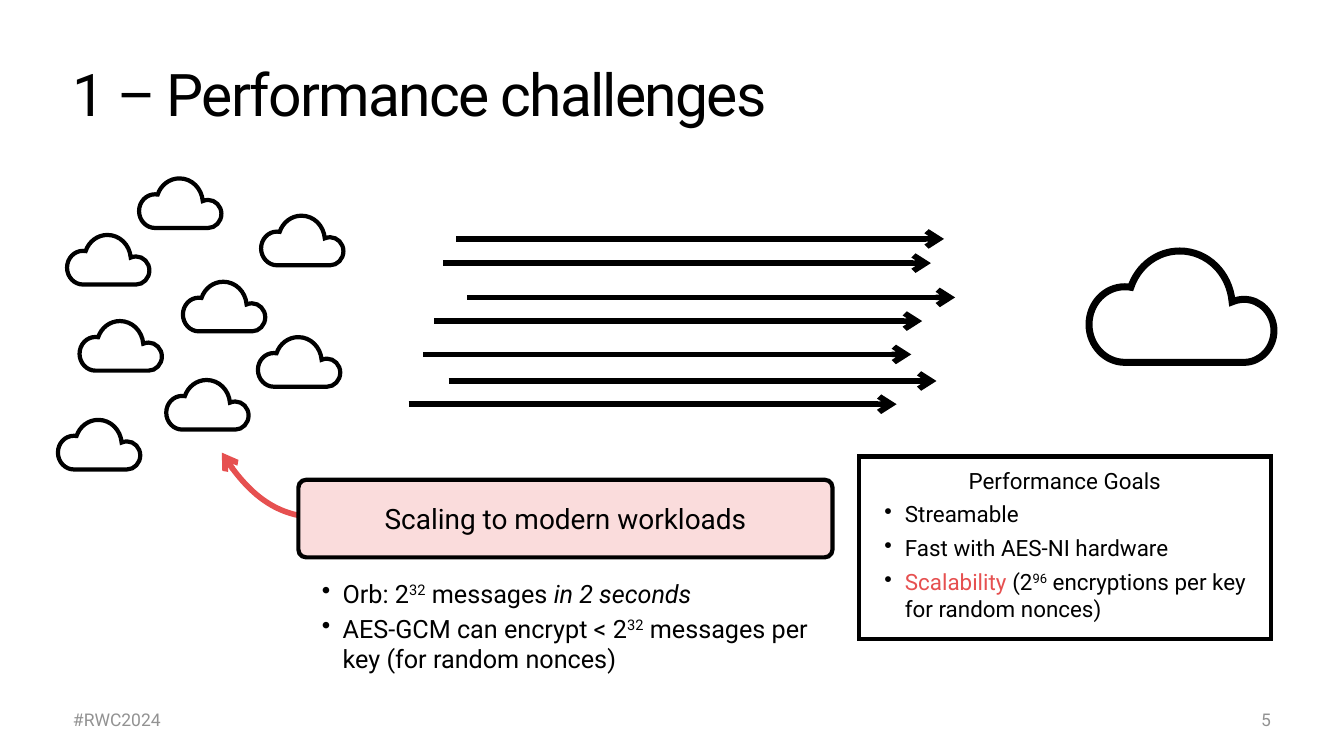
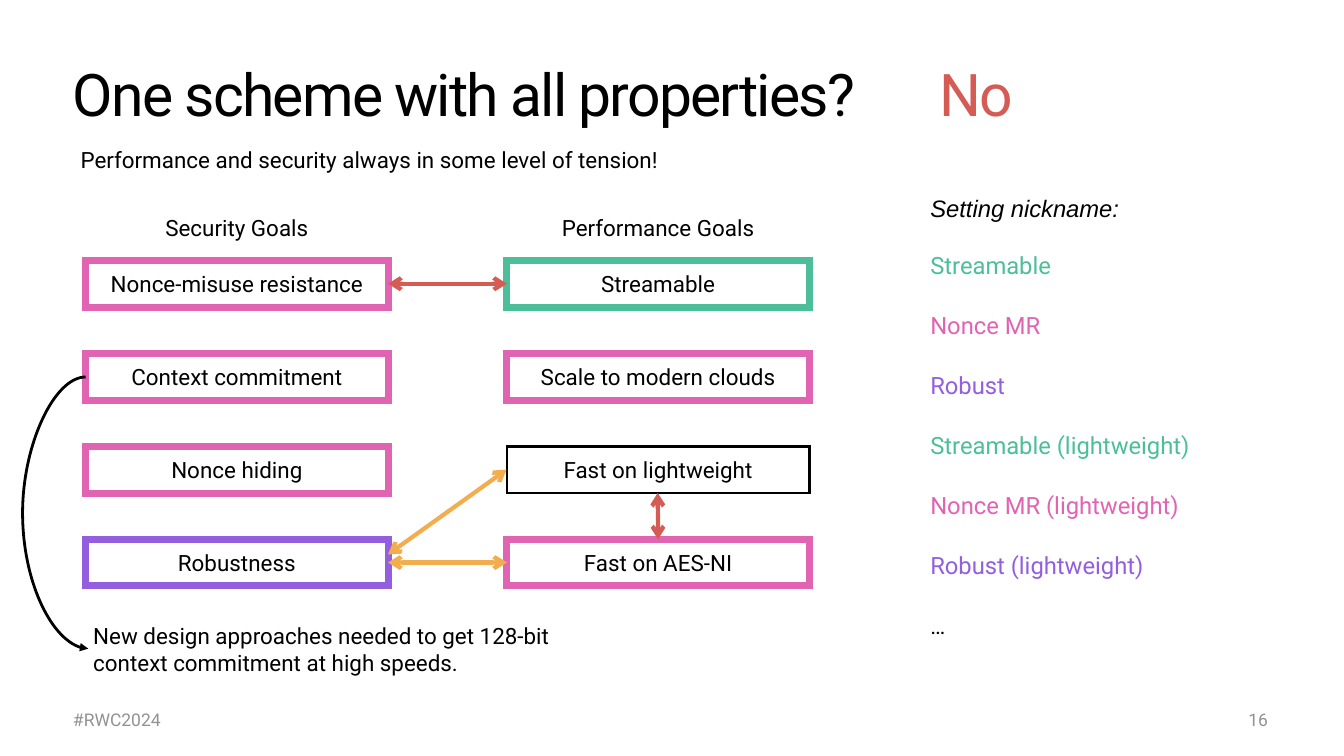
"""Build two slides on performance challenges and competing scheme properties."""
from dataclasses import dataclass
from typing import NamedTuple

from lxml.etree import SubElement
from pptx import Presentation
from pptx.dml.color import RGBColor
from pptx.enum.shapes import MSO_CONNECTOR as Connector, MSO_SHAPE as Preset
from pptx.enum.text import MSO_ANCHOR as Anchor, MSO_AUTO_SIZE as AutoSize, PP_ALIGN as Align
from pptx.oxml.ns import qn
from pptx.util import Cm, Pt

COLORS = {
    "black": "000000", "white": "FFFFFF", "gray": "929292",
    "coral": "E65050", "blush": "FADCDC", "red": "D55B55",
    "pink": "E064B2", "purple": "935FDE", "green": "4CBF99", "orange": "F2AE4E",
}
FONT = "Roboto"
CLOUD_WIDTH = 3.67
CLOUD_START = (1.8, 0)
CLOUD_CURVES = [
    [(1.35, 0), (0.97, 0.3), (0.83, 0.72)],
    [(0.79, 0.71), (0.75, 0.71), (0.71, 0.71)],
    [(0.32, 0.71), (0, 1.04), (0, 1.46)],
    [(0, 1.87), (0.32, 2.21), (0.71, 2.21)],
    [(1.5, 2.21), (2.29, 2.21), (3.08, 2.21)],
    [(3.4, 2.21), (3.67, 1.93), (3.67, 1.58)],
    [(3.67, 1.24), (3.4, 0.96), (3.08, 0.96)],
    [(2.99, 0.96), (2.91, 0.98), (2.84, 1.01)],
    [(2.79, 0.44), (2.35, 0), (1.8, 0)],
]


class Box(NamedTuple):
    left: float
    top: float
    width: float
    height: float


class Point(NamedTuple):
    x: float
    y: float


@dataclass
class Run:
    text: str
    color: str | None = None
    italic: bool = False
    raised: bool = False


@dataclass
class Line:
    runs: list[Run]
    bullet: bool = False
    align: Align | None = None
    before: float = 0
    after: float = 0
    spacing: float | None = None


@dataclass
class Goal:
    text: str
    color: str
    weight: float = 10


@dataclass
class Nickname:
    text: str
    color: str
    width: float
    size: float = 34


@dataclass
class Tension:
    start: Point
    end: Point
    color: str


def rgb(name: str) -> RGBColor:
    """Return the named colour."""
    return RGBColor.from_string(COLORS[name])


def style_line(shape, color: str, weight: float, head: str = "", tail: str = "") -> None:
    """Set the outline, its sharp corners and its arrowheads."""
    shape.line.color.rgb = rgb(color)
    shape.line.width = Pt(weight)
    outline = shape._element.spPr.find(qn("a:ln"))
    SubElement(outline, qn("a:miter"), lim="400000")
    for tag, kind in (("a:headEnd", head), ("a:tailEnd", tail)):
        if kind:
            SubElement(outline, qn(tag), type=kind)


def write_text(shape, content: str | list[Line], *, size: float, color: str = "black",
               font: str = FONT, align: Align = Align.LEFT, anchor: Anchor = Anchor.MIDDLE,
               inset: tuple[float, float] = (0.15, 0.15), wrap: bool = True,
               grow: bool = False, italic: bool = False, tracking: float = 0,
               spacing: float | None = None, before: float = 0) -> None:
    """Fill a shape with formatted text."""
    frame = shape.text_frame
    frame.word_wrap = wrap
    frame.auto_size = AutoSize.SHAPE_TO_FIT_TEXT if grow else AutoSize.NONE
    frame.vertical_anchor = anchor
    frame.margin_left = frame.margin_right = Cm(inset[0])
    frame.margin_top = frame.margin_bottom = Cm(inset[1])
    if isinstance(content, str):
        content = [Line([Run(content, italic=italic)], before=before, spacing=spacing)]
    for index, line in enumerate(content):
        paragraph = frame.add_paragraph() if index else frame.paragraphs[0]
        paragraph.alignment = line.align or align
        paragraph.space_before, paragraph.space_after = Pt(line.before), Pt(line.after)
        if line.spacing:
            paragraph.line_spacing = line.spacing
        if line.bullet:
            properties = paragraph._p.get_or_add_pPr()
            properties.set("marL", str(Cm(2.08)))
            properties.set("indent", str(Cm(-1.04)))
            bullet_color = SubElement(properties, qn("a:buClr"))
            SubElement(bullet_color, qn("a:srgbClr"), val=COLORS["black"])
            SubElement(properties, qn("a:buChar"), char="•")
        for piece in line.runs:
            run = paragraph.add_run()
            run.text = piece.text
            run.font.name, run.font.size = font, Pt(size)
            run.font.italic = piece.italic
            run.font.color.rgb = rgb(piece.color or color)
            if piece.raised:
                run._r.get_or_add_rPr().set("baseline", "32000")
            if tracking:
                run._r.get_or_add_rPr().set("spc", str(round(tracking * 100)))


def add_text(slide, box: Box, content: str | list[Line], **text_format) -> None:
    """Add a text box."""
    write_text(slide.shapes.add_textbox(*map(Cm, box)), content, **text_format)


def add_panel(slide, box: Box, content: str | list[Line], *, fill: str = "white",
              outline: str = "", weight: float = 6, preset: Preset = Preset.RECTANGLE,
              **text_format):
    """Add a filled shape with text."""
    shape = slide.shapes.add_shape(preset, *map(Cm, box))
    shape.shadow.inherit = False
    shape.fill.solid()
    shape.fill.fore_color.rgb = rgb(fill)
    if outline:
        style_line(shape, outline, weight)
    else:
        shape.line.fill.background()
    write_text(shape, content, **text_format)
    return shape


def add_link(slide, start: Point, end: Point, color: str, weight: float, *,
             head: str = "", tail: str = "", kind: Connector = Connector.STRAIGHT):
    """Add a connector with arrowheads."""
    connector = slide.shapes.add_connector(kind, *map(Cm, (*start, *end)))
    style_line(connector, color, weight, head, tail)
    SubElement(connector._element.spPr, qn("a:effectLst"))
    return connector


def add_outline(slide, start: Point, curves: list[list[Point]], closed: bool):
    """Add a freeform made of cubic curves."""
    builder = slide.shapes.build_freeform(Cm(start.x), Cm(start.y))
    builder.add_line_segments([(Cm(end.x), Cm(end.y)) for *_, end in curves], close=closed)
    shape = builder.convert_to_shape()
    shape.shadow.inherit = False
    segments = list(shape._element.spPr.iter(qn("a:lnTo")))
    for segment, curve in zip(segments, curves):
        segment.tag = qn("a:cubicBezTo")
        for corner in list(segment):
            segment.remove(corner)
        for point in curve:
            SubElement(segment, qn("a:pt"), x=str(Cm(point.x) - shape.left),
                       y=str(Cm(point.y) - shape.top))
    return shape


def add_cloud(slide, corner: Point, width: float, weight: float) -> None:
    """Add an outlined cloud."""
    scale = width / CLOUD_WIDTH

    def place(x: float, y: float) -> Point:
        """Move a cloud point onto the slide."""
        return Point(corner.x + x * scale, corner.y + y * scale)

    curves = [[place(*point) for point in curve] for curve in CLOUD_CURVES]
    cloud = add_outline(slide, place(*CLOUD_START), curves, closed=True)
    cloud.fill.solid()
    cloud.fill.fore_color.rgb = rgb("white")
    style_line(cloud, "black", weight)


def add_heading(slide, left: float, width: float, text: str, color: str = "black") -> None:
    """Add large text on the title line."""
    add_text(slide, Box(left, 2.26, width, 4.32), text, size=84, color=color,
             anchor=Anchor.BOTTOM, tracking=-2.5, spacing=0.8)


def start_slide(presentation, title: str, number: int, number_left: float):
    """Add a slide with title and footer."""
    slide = presentation.slides.add_slide(presentation.slide_layouts[6])
    add_text(slide, Box(3.53, 35.28, 25.4, 1.94), "#RWC2024", size=25, color="gray")
    add_heading(slide, 3.53, 60.68, title)
    add_text(slide, Box(number_left, 35.51, 25.4, 1.47), str(number), size=25, color="gray",
             align=Align.RIGHT, grow=True)
    return slide


def build_challenges(presentation) -> None:
    """Build the performance challenges slide."""
    slide = start_slide(presentation, "1 – Performance challenges", 5, 38.81)
    add_cloud(slide, Point(54.89, 12.65), 9.32, 10)
    for corner in [(8.38, 19.15), (4.01, 16.18), (3.38, 11.84), (9.22, 14.2),
                   (13.16, 10.87), (13, 16.99), (7.01, 8.99), (2.92, 21.16)]:
        add_cloud(slide, Point(*corner), 4.15, 6)
    for x, y in [(22.99, 12.04), (22.33, 13.26), (23.55, 14.99), (21.89, 16.18),
                 (21.34, 17.86), (22.61, 19.2), (20.6, 20.37)]:
        add_link(slide, Point(x, y), Point(x + 24.59, y), "black", 8, tail="arrow")

    bend = [Point(14.63, 26.31), Point(12.65, 25.25), Point(11.18, 22.81)]
    pointer = add_outline(slide, Point(17.07, 26.04), [bend], closed=False)
    pointer.fill.background()
    style_line(pointer, "coral", 8, tail="arrow")
    banner = add_panel(slide, Box(15.04, 24.18, 26.92, 3.91), "Scaling to modern workloads",
                       fill="blush", outline="black", preset=Preset.ROUNDED_RECTANGLE,
                       size=40, align=Align.CENTER)
    banner.adjustments[0] = 0.1

    workloads = [
        Line([Run("Orb: 2"), Run("32", raised=True), Run(" messages "),
              Run("in 2 seconds", italic=True)], bullet=True, after=6, spacing=1.5),
        Line([Run("AES-GCM can encrypt < 2"), Run("32", raised=True),
              Run(" messages per key (for random nonces)")], bullet=True, after=6),
    ]
    add_text(slide, Box(15.04, 28.24, 26.92, 5.89), workloads, size=36,
             anchor=Anchor.TOP, grow=True)
    bullets = [
        [Run("Streamable")],
        [Run("Fast with AES-NI hardware")],
        [Run("Scalability", color="coral"), Run(" (2"), Run("96", raised=True),
         Run(" encryptions per key for random nonces)")],
    ]
    goals = [Line([Run("Performance Goals")], align=Align.CENTER)]
    goals += [Line(runs, bullet=True, before=10) for runs in bullets]
    add_panel(slide, Box(43.28, 23.01, 20.78, 9.19), goals, outline="black", size=32,
              anchor=Anchor.TOP, inset=(0.25, 0.51))


def build_properties(presentation) -> None:
    """Build the competing properties slide."""
    slide = start_slide(presentation, "One scheme with all properties?", 16, 38.66)
    add_heading(slide, 47.19, 18.08, "No", "red")
    add_text(slide, Box(3.91, 7.16, 30.81, 1.75),
             "Performance and security always in some level of tension!",
             size=32, wrap=False, grow=True, before=8)

    columns = {
        "Security Goals": [Goal("Nonce-misuse resistance", "pink"),
                           Goal("Context commitment", "pink"),
                           Goal("Nonce hiding", "pink"), Goal("Robustness", "purple")],
        "Performance Goals": [Goal("Streamable", "green"),
                              Goal("Scale to modern clouds", "pink"),
                              Goal("Fast on lightweight", "black", 4),
                              Goal("Fast on AES-NI", "pink")],
    }
    for left, (header, goals) in zip((4.32, 25.55), columns.items()):
        add_panel(slide, Box(left, 10.29, 15.24, 2.36), header, size=32, align=Align.CENTER)
        for row, goal in enumerate(goals):
            add_panel(slide, Box(left, 13.13 + row * 4.68, 15.24, 2.36), goal.text,
                      outline=goal.color, weight=goal.weight, size=32, align=Align.CENTER)

    for tension in [Tension(Point(25.55, 14.3), Point(19.56, 14.3), "red"),
                    Tension(Point(25.55, 28.35), Point(19.56, 28.35), "orange"),
                    Tension(Point(33.15, 24.84), Point(33.17, 27.18), "red"),
                    Tension(Point(25.53, 23.67), Point(19.56, 27.94), "orange")]:
        add_link(slide, tension.start, tension.end, tension.color, 6, head="arrow", tail="arrow")

    add_text(slide, Box(46.74, 9.6, 10.67, 1.73), "Setting nickname:", size=34, font="Arial",
             italic=True, wrap=False, grow=True, before=8)
    nicknames = [
        Nickname("Streamable", "green", 6.93), Nickname("Nonce MR", "pink", 6.22),
        Nickname("Robust", "purple", 4.37), Nickname("Streamable (lightweight)", "green", 14.6),
        Nickname("Nonce MR (lightweight)", "pink", 13.89),
        Nickname("Robust (lightweight)", "purple", 12.04), Nickname("…", "black", 1.24, 32),
    ]
    for row, name in enumerate(nicknames):
        add_text(slide, Box(46.74, 12.47 + row * 3.03, name.width, 1.73), name.text,
                 size=name.size, color=name.color, wrap=False, grow=True, before=8)

    add_text(slide, Box(4.45, 31.17, 25.3, 3.05),
             "New design approaches needed to get 128-bit context commitment at high speeds.",
             size=32, inset=(0.25, 0.15), grow=True, before=8)
    loop = add_link(slide, Point(4.45, 32.69), Point(4.32, 19), "black", 4,
                    head="triangle", kind=Connector.CURVE)
    bend = round((4.45 - 1.14) / (4.45 - 4.32) * 100000)
    guides = loop._element.spPr.find(qn("a:prstGeom")).get_or_add_avLst()
    SubElement(guides, qn("a:gd"), name="adj1", fmla=f"val {bend}")


def main() -> None:
    """Build and save the presentation."""
    presentation = Presentation()
    presentation.slide_width, presentation.slide_height = Cm(67.74), Cm(38.1)
    build_challenges(presentation)
    build_properties(presentation)
    presentation.save("out.pptx")


if __name__ == "__main__":
    main()
